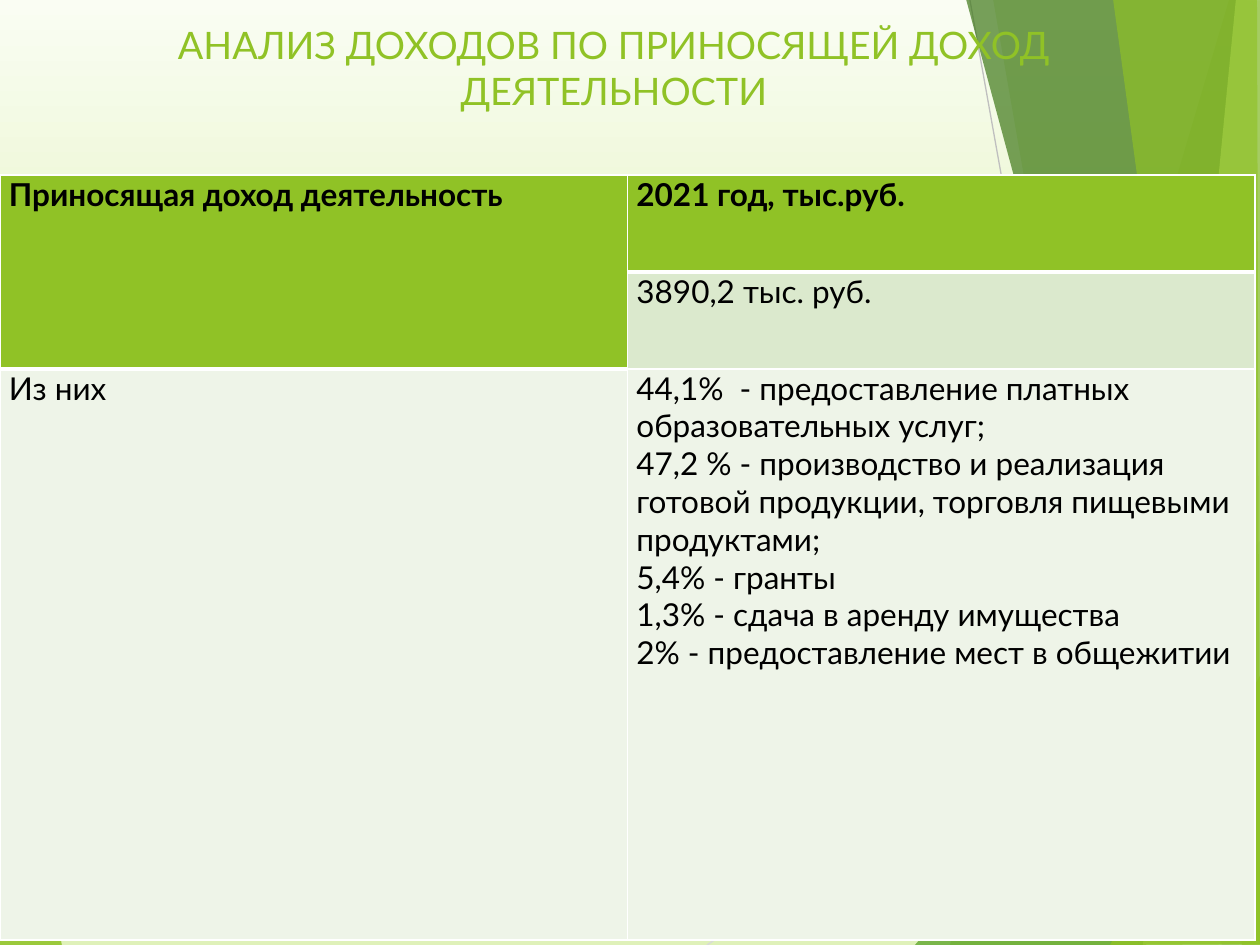
from dataclasses import dataclass

from pptx import Presentation
from pptx.dml.color import RGBColor
from pptx.enum.shapes import MSO_CONNECTOR as Connector
from pptx.enum.text import MSO_ANCHOR as Anchor, PP_ALIGN as Align
from pptx.oxml.ns import qn
from pptx.util import Emu, Pt
from lxml.etree import SubElement

SCALE = 914400 / 126  # EMU per px


@dataclass(frozen=True)
class Theme:
    font: str = "Lato"
    title_size: float = 21.6
    body_size: float = 18
    lime: str = "90C226"
    green: str = "54A021"
    dark: str = "3F7819"
    light: str = "C0E474"
    ink: str = "000000"
    white: str = "FFFFFF"
    band: str = "DBE9CD"
    pale: str = "EEF4E8"
    line_light: str = "D9D9D9"
    line_dark: str = "BFBFBF"
    backdrop: tuple = ((0, "FAFDF3"), (74, "D0EB96"), (83, "D0EB96"), (100, "DFF1B9"))


theme = Theme()


def px(value):
    return Emu(round(value * SCALE))


def write(frame, text, size=theme.body_size, color=theme.ink, bold=False, align=Align.LEFT):
    """Fill a text frame, one paragraph per line of text."""
    frame.word_wrap = True
    for index, line in enumerate(text.split("\n")):
        para = frame.add_paragraph() if index else frame.paragraphs[0]
        para.alignment = align
        span = para.add_run()
        span.text = line
        span.font.name = theme.font
        span.font.size = Pt(size)
        span.font.bold = bold
        span.font.color.rgb = RGBColor.from_string(color)


deck = Presentation()
deck.slide_width, deck.slide_height = px(1260), px(945)
page = deck.slides.add_slide(deck.slide_layouts[6])

# Background gradient, running downwards
fill = page.background.fill
fill.gradient()
fill.gradient_angle = 270
stops = next(page.element.iter(qn("a:gsLst")))
for stop in list(stops):
    stops.remove(stop)
for percent, color in theme.backdrop:
    stop = SubElement(stops, qn("a:gs"), pos=str(percent * 1000))
    SubElement(stop, qn("a:srgbClr"), val=color)

# Decorative facets and thin lines, back to front: color, opacity in percent, points
facets = [
    (theme.lime, 85, [(-1, 553), (62, 946), (-1, 945)]),
    (theme.line_light, None, [(707, 945), (1261, 576)]),
    (theme.line_dark, None, [(970, 0), (1139, 945)]),
    (theme.lime, 30, [(1229, 0), (950, 945), (1263, 946), (1261, 1)]),
    (theme.lime, 20, [(993, -1), (1158, 945), (1261, 945), (1261, -1)]),
    (theme.green, 72, [(915, 945), (1260, 541), (1261, 945)]),
    (theme.dark, 70, [(966, -1), (1222, 945), (1261, 944), (1261, -1)]),
    (theme.light, 70, [(1236, -1), (1143, 945), (1261, 945), (1260, -1)]),
    (theme.lime, 65, [(1113, -1), (1242, 945), (1260, 945), (1257, -1)]),
    (theme.lime, 80, [(1110, 945), (1261, 674), (1261, 944)]),
]
for color, opacity, points in facets:
    corners = [(px(x), px(y)) for x, y in points]
    if opacity is None:
        line = page.shapes.add_connector(Connector.STRAIGHT, *corners[0], *corners[1])
        line.line.color.rgb = RGBColor.from_string(color)
        line.line.width = Pt(0.75)
        SubElement(line.element.spPr, qn("a:effectLst"))
        continue
    builder = page.shapes.build_freeform(*corners[0])
    builder.add_line_segments(corners[1:], close=True)
    facet = builder.convert_to_shape()
    facet.shadow.inherit = False
    facet.line.fill.background()
    facet.fill.solid()
    facet.fill.fore_color.rgb = RGBColor.from_string(color)
    tint = next(facet.element.spPr.iter(qn("a:srgbClr")))
    SubElement(tint, qn("a:alpha"), val=str(opacity * 1000))

# Title
title = page.shapes.add_textbox(px(15), px(16), px(1198), px(100))
write(title.text_frame, "АНАЛИЗ ДОХОДОВ ПО ПРИНОСЯЩЕЙ ДОХОД ДЕЯТЕЛЬНОСТИ",
      size=theme.title_size, color=theme.lime, align=Align.CENTER)

# Income table
row_heights = [97, 97, 571]
table = page.shapes.add_table(3, 2, px(0), px(175), px(1255), px(sum(row_heights))).table
table.first_row = table.horz_banding = False
for row, height in zip(table.rows, row_heights):
    row.height = px(height)
table.cell(0, 0).merge(table.cell(1, 0))

income = """44,1%  - предоставление платных образовательных услуг;
47,2 % - производство и реализация готовой продукции, торговля пищевыми продуктами;
5,4% - гранты
1,3% - сдача в аренду имущества
2% - предоставление мест в общежитии"""
# Each cell: text, fill, is it a header
cells = {
    (0, 0): ("Приносящая доход деятельность", theme.lime, True),
    (0, 1): ("2021 год, тыс.руб.", theme.lime, True),
    (1, 0): ("", theme.lime, True),
    (1, 1): ("3890,2 тыс. руб.", theme.band, False),
    (2, 0): ("Из них", theme.pale, False),
    (2, 1): (income, theme.pale, False),
}
for (row, column), (text, color, header) in cells.items():
    cell = table.cell(row, column)
    cell.margin_left = cell.margin_right = px(9)
    cell.margin_top = cell.margin_bottom = 0
    cell.vertical_anchor = Anchor.TOP
    if text:
        write(cell.text_frame, text, bold=header)
    # Borders come before the fill in the cell properties
    properties = cell._tc.get_or_add_tcPr()
    for side in ("lnL", "lnR", "lnT", "lnB"):
        above_header = side == "lnT" and (row, column) in ((1, 1), (2, 0))
        thick = header and side == "lnB" or above_header
        border = SubElement(properties, qn(f"a:{side}"), w=str(Pt(3 if thick else 1)))
        SubElement(SubElement(border, qn("a:solidFill")), qn("a:srgbClr"), val=theme.white)
    cell.fill.solid()
    cell.fill.fore_color.rgb = RGBColor.from_string(color)

deck.save("out.pptx")
